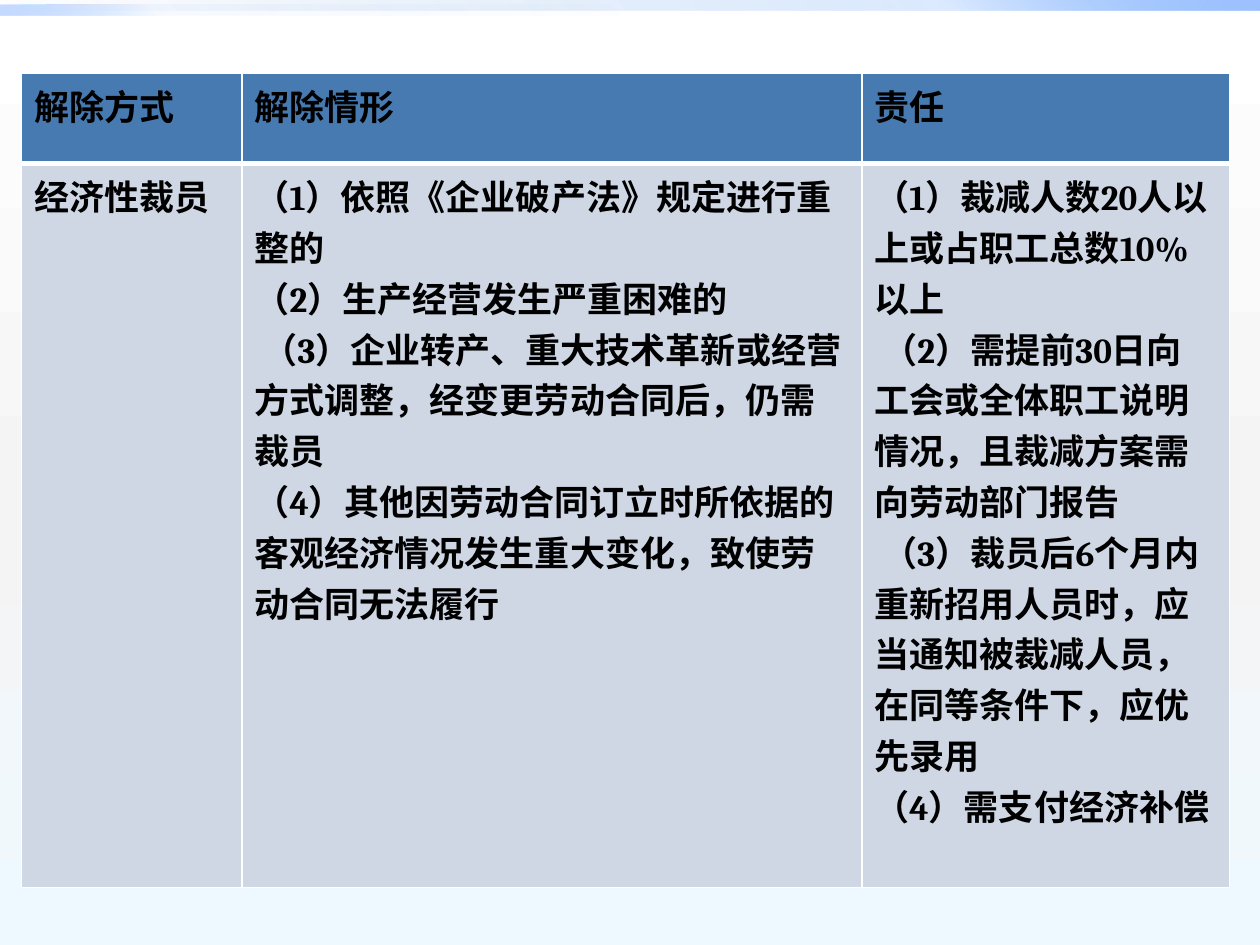
from lxml.etree import SubElement as Sub
from pptx import Presentation
from pptx.dml.color import RGBColor as RGB
from pptx.enum.shapes import MSO_SHAPE as Shape
from pptx.oxml.ns import qn
from pptx.util import Inches, Pt

COLORS = {
    "ink": "000000", "white": "FFFFFF", "grey": "F4F4F4", "ice": "EEF9FF",
    "navy": "0058B7", "blue": "4F95FF", "sky": "9EC2FF",
    "head": "477AB1", "body": "CFD7E4",
}

ROWS = [
    ["解除方式", "解除情形", "责任"],
    [
        "经济性裁员",
        "（1）依照《企业破产法》规定进行重整的\n"
        "（2）生产经营发生严重困难的\n"
        " （3）企业转产、重大技术革新或经营方式调整，经变更劳动合同后，仍需裁员\n"
        "（4）其他因劳动合同订立时所依据的客观经济情况发生重大变化，致使劳动合同无法履行",
        "（1）裁减人数20人以上或占职工总数10%以上\n"
        " （2）需提前30日向工会或全体职工说明情况，且裁减方案需向劳动部门报告\n"
        " （3）裁员后6个月内重新招用人员时，应当通知被裁减人员，在同等条件下，应优先录用\n"
        "（4）需支付经济补偿",
    ],
]


class Page:
    font, size = "Cambria", Pt(20)

    def __init__(self, slide):
        self.slide = slide

    def blend(self, grad, stops, angle):
        """Fill a gradFill element with (position, colour, opacity) stops."""
        group = grad.find(qn("a:gsLst"))
        group.clear()
        for pos, name, alpha in stops:
            stop = Sub(group, qn("a:gs"), pos=str(pos * 1000))
            color = Sub(stop, qn("a:srgbClr"), val=COLORS[name])
            if alpha < 100:
                Sub(color, qn("a:alpha"), val=str(alpha * 1000))
        grad.find(qn("a:lin")).set("ang", str(angle * 60000))

    def backdrop(self, stops, angle):
        self.slide.background.fill.gradient()
        grad = self.slide.element.xpath(".//p:bg//a:gradFill")[0]
        self.blend(grad, stops, angle)

    def band(self, box, stops, angle):
        bar = self.slide.shapes.add_shape(Shape.RECTANGLE, *map(Inches, box))
        bar.shadow.inherit = False
        bar.line.fill.background()
        bar.fill.gradient()
        self.blend(bar.element.xpath(".//a:gradFill")[0], stops, angle)

    def border(self, cell, widths):
        props = cell._tc.get_or_add_tcPr()
        for side, width in zip("LRTB", widths):
            line = Sub(props, qn(f"a:ln{side}"), w=str(Pt(width)))
            fill = Sub(line, qn("a:solidFill"))
            Sub(fill, qn("a:srgbClr"), val=COLORS["white"])

    def cell(self, cell, text, fill, widths):
        self.border(cell, widths)
        cell.fill.solid()
        cell.fill.fore_color.rgb = RGB.from_string(COLORS[fill])
        cell.text_frame.text = text
        for para in cell.text_frame.paragraphs:
            for run in para.runs:
                font = run.font
                font.name, font.size, font.bold = self.font, self.size, True
                font.color.rgb = RGB.from_string(COLORS["ink"])

    def table(self, left, top, cols, heights, rows):
        box = map(Inches, (left, top, sum(cols), sum(heights)))
        grid = self.slide.shapes.add_table(len(rows), len(cols), *box).table
        for col, width in zip(grid.columns, cols):
            col.width = Inches(width)
        for i, (row, height) in enumerate(zip(rows, heights)):
            grid.rows[i].height = Inches(height)
            # The rule between header and body is thicker.
            fill, widths = ("body", (1, 1, 3, 1)) if i else ("head", (1, 1, 1, 3))
            for j, text in enumerate(row):
                self.cell(grid.cell(i, j), text, fill, widths)


def main():
    deck = Presentation()
    deck.slide_width, deck.slide_height = Inches(10), Inches(7.5)
    page = Page(deck.slides.add_slide(deck.slide_layouts[6]))
    page.backdrop([(0, "white", 100), (55, "grey", 100), (100, "ice", 100)], 90)
    page.band((0, 0, 10, 0.08),
              [(0, "navy", 0), (75, "blue", 20), (100, "sky", 100)], 315)
    page.band((0, 0.04, 5, 0.08),
              [(0, "navy", 0), (75, "blue", 5), (100, "sky", 60)], 135)
    page.table(0.17, 0.58, (1.75, 4.92, 2.92), (0.72, 4.78), ROWS)
    deck.save("out.pptx")


if __name__ == "__main__":
    main()
